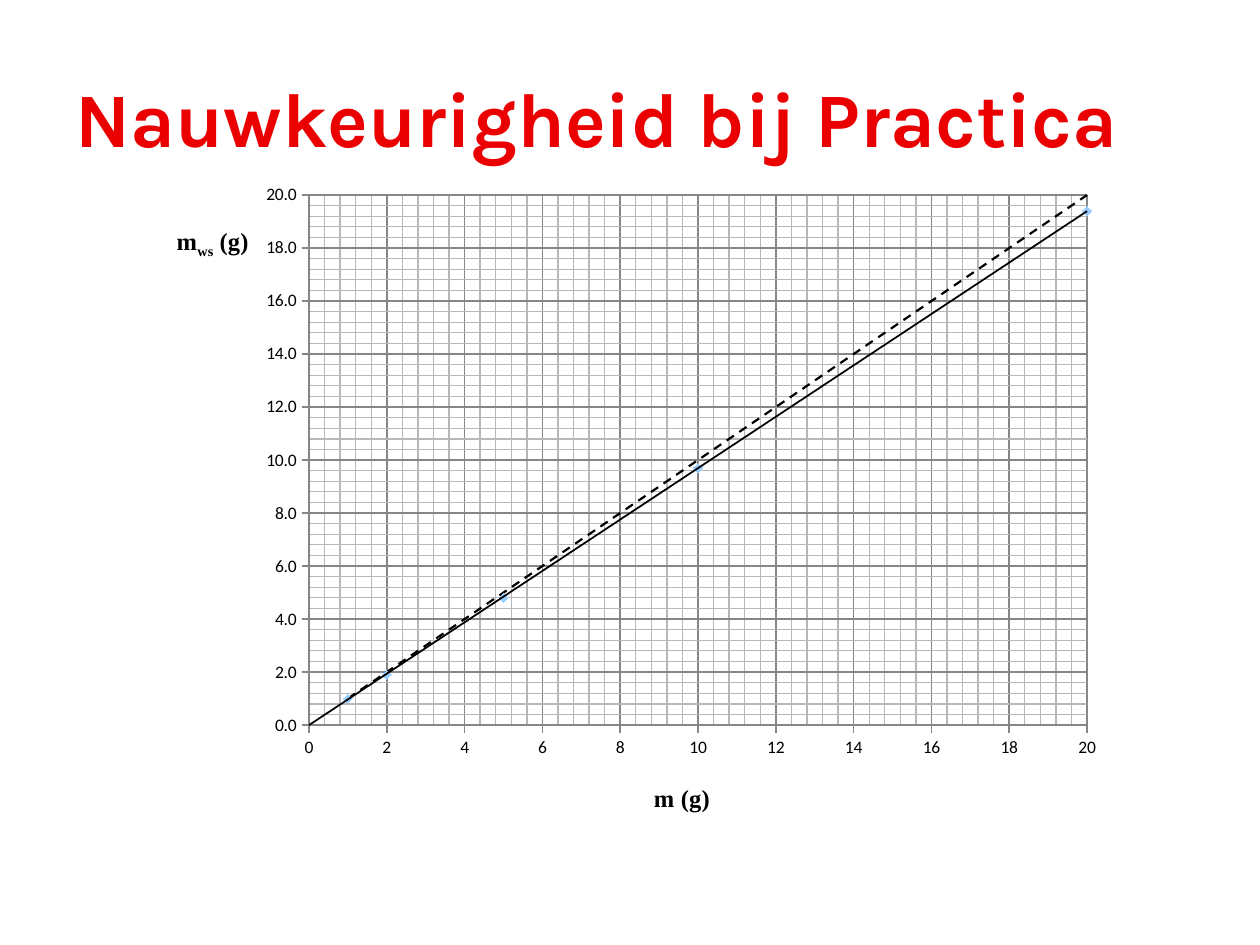
import pptx
import pptx.util
import pptx.dml.color
import pptx.chart.data
import pptx.enum.chart
import pptx.enum.dml
import pptx.enum.text
import pptx.oxml
import pptx.oxml.ns

Inches, Pt = pptx.util.Inches, pptx.util.Pt
NS = ('xmlns:c="http://schemas.openxmlformats.org/drawingml/2006/chart" '
      'xmlns:a="http://schemas.openxmlformats.org/drawingml/2006/main"')

HEAD = "Nauwkeurigheid bij Practica"
MASS = [1, 2, 5, 10, 20]
READ = [1, 1.9, 4.8, 9.7, 19.4]
LINES = [("Series 1", READ), ("Series 2", MASS)]
X_NAME = [("m (g)", 0)]
Y_NAME = [("m", 0), ("ws", -25000), (" (g)", 0)]
TOP, STEP, MINOR = 20, 2, 0.4
PLOT = (0.17, 0.03, 0.8, 0.8)
BLACK, GREY, PALE, BLUE, RED = "000000", "868686", "B7B7B7", "99CCFF", "EA0000"


def color(code):
    return pptx.dml.color.RGBColor.from_string(code)


def write(para, text, font="Calibri", size=10, fill=BLACK, bold=False, shift=0):
    run = para.add_run()
    run.text = text
    face = run.font
    face.name, face.size, face.bold = font, Pt(size), bold
    face.color.rgb = color(fill)
    if shift:
        run._r.get_or_add_rPr().set("baseline", str(shift))


def node(xml):
    """Parse a chart element, declaring its namespaces on the root."""
    tag, rest = xml.split(">", 1)
    return pptx.oxml.parse_xml(f"{tag} {NS}>{rest}")


def place(x, y, w=None, h=None):
    """Make a manual layout in fractions of the chart."""
    parts = [("xMode", "edge"), ("yMode", "edge"), ("x", x), ("y", y)]
    if w:
        parts = [("layoutTarget", "inner")] + parts + [("w", w), ("h", h)]
    body = "".join(f'<c:{tag} val="{val}"/>' for tag, val in parts)
    return node(f"<c:layout><c:manualLayout>{body}</c:manualLayout></c:layout>")


def stroke(code, width):
    return (f'<c:spPr><a:ln w="{Pt(width)}"><a:solidFill><a:srgbClr val="{code}"/>'
            '</a:solidFill></a:ln></c:spPr>')


def swap(root, tag, new, after):
    """Replace a child, or put it right after another one."""
    old = root.find(pptx.oxml.ns.qn(tag))
    if old is not None:
        root.remove(old)
    root.find(pptx.oxml.ns.qn(after)).addnext(new)


def style(axis, name, spot, form):
    axis.minimum_scale, axis.maximum_scale = 0, TOP
    axis.major_unit, axis.minor_unit = STEP, MINOR
    axis.major_tick_mark = pptx.enum.chart.XL_TICK_MARK.CROSS
    axis.minor_tick_mark = pptx.enum.chart.XL_TICK_MARK.NONE
    axis.tick_labels.number_format = form
    axis.tick_labels.number_format_is_linked = False
    axis.has_major_gridlines = axis.has_minor_gridlines = True
    for line in (axis.format.line, axis.major_gridlines.format.line):
        line.color.rgb, line.width = color(GREY), Pt(1)
    minor = axis._element.find(pptx.oxml.ns.qn("c:minorGridlines"))
    minor.append(node(stroke(PALE, 0.75).replace("<c:spPr>", "<c:spPr >")))

    title = axis.axis_title
    para = title.text_frame.paragraphs[0]
    for text, shift in name:
        write(para, text, font="Times New Roman", size=14, bold=True, shift=shift)
    body = title._element.find(".//" + pptx.oxml.ns.qn("a:bodyPr"))
    body.set("rot", "0")
    body.set("vert", "horz")
    swap(title._element, "c:layout", place(*spot), "c:tx")


def draw(slide):
    data = pptx.chart.data.XyChartData()
    for name, vals in LINES:
        row = data.add_series(name)
        for x, y in zip(MASS, vals):
            row.add_data_point(x, y)
    kind = pptx.enum.chart.XL_CHART_TYPE.XY_SCATTER_LINES
    chart = slide.shapes.add_chart(kind, Inches(1.14), Inches(1.39),
                                   Inches(7.72), Inches(5.26), data).chart
    chart.has_legend = chart.has_title = False
    chart.font.name, chart.font.size = "Calibri", Pt(10)
    chart.font.color.rgb = color(BLACK)
    plot = chart.plots[0]
    plot.vary_by_categories = False
    area = plot._element.getparent()
    old = area.find(pptx.oxml.ns.qn("c:layout"))
    if old is not None:
        area.remove(old)
    area.insert(0, place(*PLOT))

    style(chart.category_axis, X_NAME, (0.52, 0.91), "0")
    style(chart.value_axis, Y_NAME, (0.03, 0.07), "0.0")

    read, ideal = plot.series
    read.smooth = ideal.smooth = False
    read.format.line.fill.background()
    mark = read.marker
    mark.style, mark.size = pptx.enum.chart.XL_MARKER_STYLE.DIAMOND, 5
    mark.format.fill.solid()
    mark.format.fill.fore_color.rgb = color(BLUE)
    mark.format.line.color.rgb = color(BLUE)
    trend = node("<c:trendline>" + stroke(BLACK, 1) +
                 '<c:trendlineType val="linear"/><c:backward val="1"/>'
                 '<c:intercept val="0"/><c:dispRSqr val="0"/>'
                 '<c:dispEq val="0"/></c:trendline>')
    read._element.find(pptx.oxml.ns.qn("c:xVal")).addprevious(trend)

    ideal.marker.style = pptx.enum.chart.XL_MARKER_STYLE.NONE
    line = ideal.format.line
    line.color.rgb, line.width = color(BLACK), Pt(1.25)
    line.dash_style = pptx.enum.dml.MSO_LINE.DASH


def main():
    deck = pptx.Presentation()
    deck.slide_width, deck.slide_height = Inches(10), Inches(7.5)
    slide = deck.slides.add_slide(deck.slide_layouts[6])
    box = slide.shapes.add_textbox(Inches(0.5), Inches(0.3), Inches(9), Inches(1.25))
    frame = box.text_frame
    frame.word_wrap = True
    frame.vertical_anchor = pptx.enum.text.MSO_ANCHOR.MIDDLE
    write(frame.paragraphs[0], HEAD, font="Karla", size=44, fill=RED, bold=True)
    draw(slide)
    deck.save("out.pptx")


if __name__ == "__main__":
    main()
